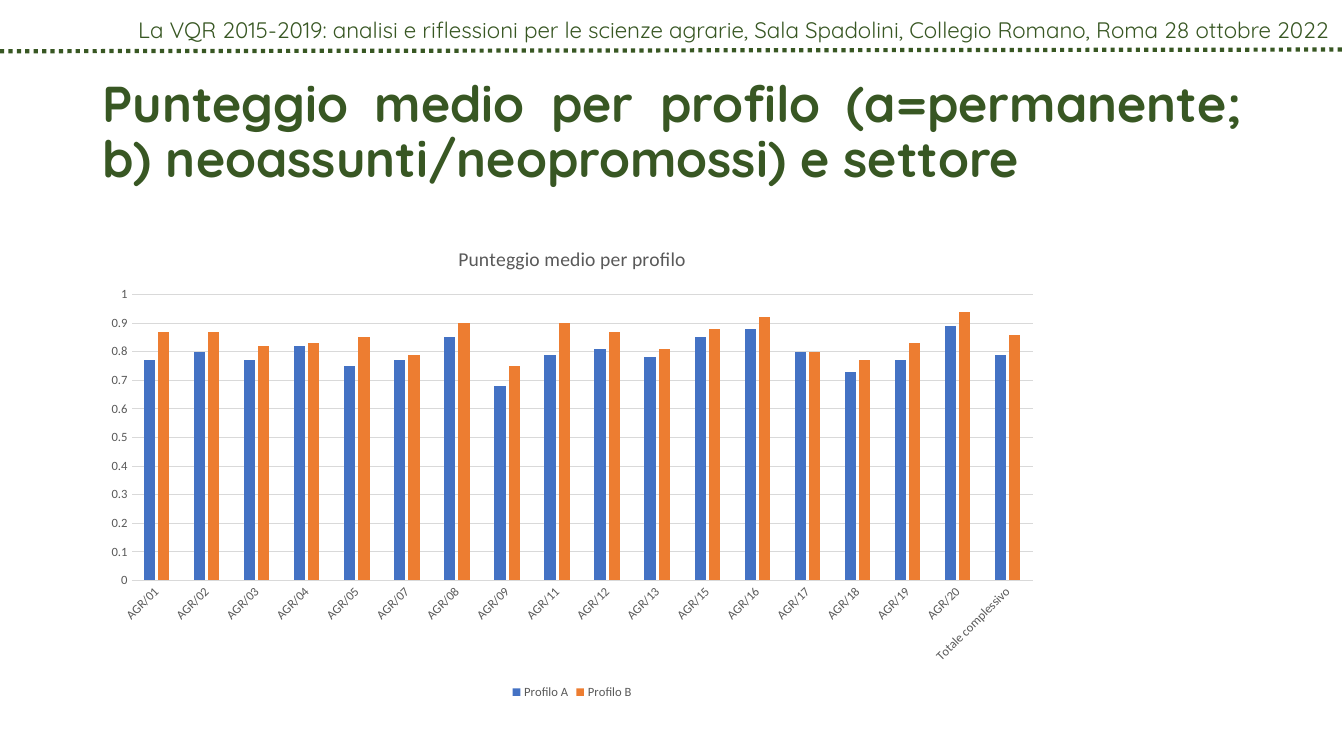
from lxml import etree
from pptx import Presentation
from pptx.chart.data import CategoryChartData
from pptx.dml.color import RGBColor
from pptx.enum.chart import XL_CHART_TYPE, XL_LEGEND_POSITION, XL_TICK_MARK
from pptx.enum.dml import MSO_LINE
from pptx.enum.shapes import MSO_CONNECTOR
from pptx.enum.text import MSO_ANCHOR, MSO_AUTO_SIZE, PP_ALIGN
from pptx.oxml.ns import qn
from pptx.util import Pt

GREEN = RGBColor(0x38, 0x57, 0x23)
GREY = RGBColor(0x59, 0x59, 0x59)
LIGHT_GREY = RGBColor(0xD9, 0xD9, 0xD9)
BLUE = RGBColor(0x44, 0x72, 0xC4)
ORANGE = RGBColor(0xED, 0x7D, 0x31)
COLUMNS = XL_CHART_TYPE.COLUMN_CLUSTERED
LEGEND_BOTTOM = XL_LEGEND_POSITION.BOTTOM
NO_TICK = XL_TICK_MARK.NONE

SECTORS = ["AGR/01", "AGR/02", "AGR/03", "AGR/04", "AGR/05", "AGR/07",
           "AGR/08", "AGR/09", "AGR/11", "AGR/12", "AGR/13", "AGR/15",
           "AGR/16", "AGR/17", "AGR/18", "AGR/19", "AGR/20",
           "Totale complessivo"]
PROFILES = [
    ("Profilo A", BLUE, [0.77, 0.8, 0.77, 0.82, 0.75, 0.77, 0.85, 0.68, 0.79,
                         0.81, 0.78, 0.85, 0.88, 0.8, 0.73, 0.77, 0.89, 0.79]),
    ("Profilo B", ORANGE, [0.87, 0.87, 0.82, 0.83, 0.85, 0.79, 0.9, 0.75, 0.9,
                           0.87, 0.81, 0.88, 0.92, 0.8, 0.77, 0.83, 0.94, 0.86]),
]


def set_font(font, name, size, color, bold=False):
    font.name = name
    font.size = Pt(size)
    font.color.rgb = color
    font.bold = bold


prs = Presentation()
prs.slide_width, prs.slide_height = Pt(960), Pt(540)
slide = prs.slides.add_slide(prs.slide_layouts[5])

# Event header
event = slide.shapes.add_textbox(Pt(-3.6), Pt(7.9), Pt(960), Pt(26.6)).text_frame
event.word_wrap = True
event.auto_size = MSO_AUTO_SIZE.SHAPE_TO_FIT_TEXT
event_line = event.paragraphs[0]
event_line.text = ("La VQR 2015-2019: analisi e riflessioni per le scienze agrarie, "
                   "Sala Spadolini, Collegio Romano, Roma 28 ottobre 2022")
event_line.alignment = PP_ALIGN.RIGHT
set_font(event_line.font, "Quicksand", 16, GREEN)

# Dotted rule under the header
rule = slide.shapes.add_connector(MSO_CONNECTOR.STRAIGHT, Pt(0), Pt(36.6), Pt(960), Pt(35.4))
rule.line.color.rgb = GREEN
rule.line.width = Pt(3)
rule.line.dash_style = MSO_LINE.ROUND_DOT
etree.SubElement(rule._element.spPr, qn("a:effectLst"))

# Title
title = slide.shapes.title
title.left, title.top, title.width, title.height = Pt(66), Pt(43.2), Pt(828), Pt(104.4)
title.text_frame.word_wrap = True
title.text_frame.auto_size = MSO_AUTO_SIZE.NONE
title.text_frame.vertical_anchor = MSO_ANCHOR.MIDDLE
heading = title.text_frame.paragraphs[0]
heading.text = "Punteggio medio per profilo (a=permanente; b) neoassunti/neopromossi) e settore"
heading.alignment = PP_ALIGN.JUSTIFY
heading.line_spacing = 0.9
set_font(heading.font, "Quicksand", 36, GREEN, bold=True)

# Chart of mean scores
scores = CategoryChartData(number_format="General")
scores.categories = SECTORS
for profile, _, values in PROFILES:
    scores.add_series(profile, values)
chart = slide.shapes.add_chart(COLUMNS, Pt(66), Pt(162), Pt(685.4), Pt(340.6), scores).chart
set_font(chart.font, "Calibri", 10, GREY)

chart.has_title = True
chart_title = chart.chart_title.text_frame.paragraphs[0]
chart_title.text = "Punteggio medio per profilo"
set_font(chart_title.font, "Calibri", 14, GREY)
chart.chart_title.include_in_layout = False

chart.has_legend = True
chart.legend.position = LEGEND_BOTTOM
chart.legend.include_in_layout = False
set_font(chart.legend.font, "Calibri", 9, GREY)

# Columns
plot = chart.plots[0]
plot.gap_width = 219
plot.overlap = -27
plot.vary_by_categories = False
for series, (_, color, _) in zip(plot.series, PROFILES):
    series.format.fill.solid()
    series.format.fill.fore_color.rgb = color
    series.invert_if_negative = False

# Axes
sector_axis, score_axis = chart.category_axis, chart.value_axis
for axis in (sector_axis, score_axis):
    axis.major_tick_mark = NO_TICK
    axis.minor_tick_mark = NO_TICK
    set_font(axis.tick_labels.font, "Calibri", 9, GREY)
sector_axis.format.line.color.rgb = LIGHT_GREY
sector_axis.format.line.width = Pt(0.75)
label_body = sector_axis._element.find(qn("c:txPr")).find(qn("a:bodyPr"))
label_body.set("rot", "-2700000")
label_body.set("vert", "horz")

score_axis.minimum_scale, score_axis.maximum_scale = 0, 1
score_axis.major_unit = 0.1
score_axis.format.line.fill.background()
score_axis.major_gridlines.format.line.color.rgb = LIGHT_GREY
score_axis.major_gridlines.format.line.width = Pt(0.75)

prs.save("out.pptx")
